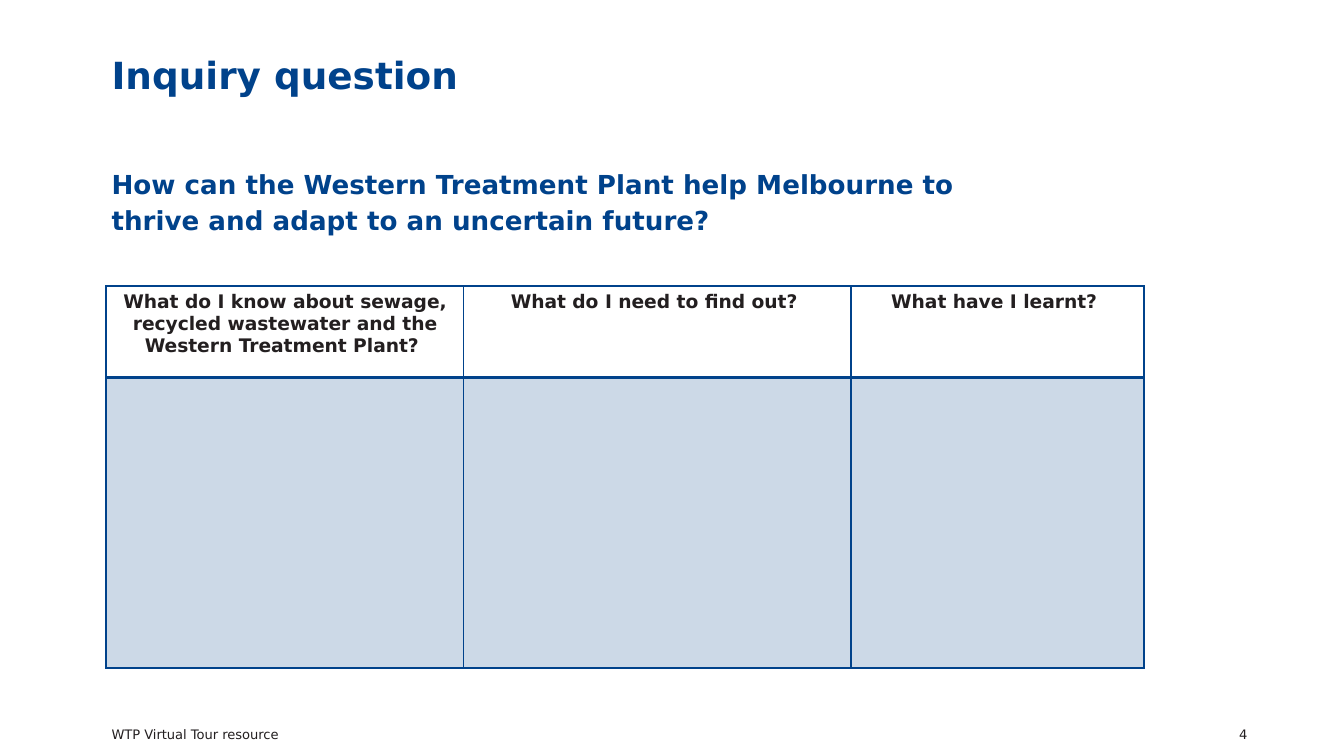
from lxml import etree
from pptx import Presentation
from pptx.dml.color import RGBColor
from pptx.enum.text import MSO_ANCHOR, PP_ALIGN
from pptx.oxml.ns import qn
from pptx.util import Inches, Pt

TOP, MIDDLE = MSO_ANCHOR.TOP, MSO_ANCHOR.MIDDLE
LEFT, CENTER, RIGHT = PP_ALIGN.LEFT, PP_ALIGN.CENTER, PP_ALIGN.RIGHT
BLUE = RGBColor(0x00, 0x42, 0x8B)
PALE = RGBColor(0xCC, 0xD9, 0xE7)
INK = RGBColor(0x23, 0x1F, 0x20)
FONT = "DejaVu Sans"
WIDE = 10
HIGH = WIDE * 9 / 16
EDGE = 0.79
FOOT = 5.37

# text, box (left, top, width, height), size, colour, bold, align, anchor, line spacing
TEXTS = [
    ("Inquiry question", (EDGE, 0.06, 5.79, 1.03),
     20, BLUE, True, LEFT, MIDDLE, 0.9),
    ("How can the Western Treatment Plant help Melbourne to thrive "
     "and adapt to an uncertain future?", (EDGE, 1.18, 6.46, 4.02),
     14, BLUE, True, LEFT, TOP, 1.15),
    ("WTP Virtual Tour resource", (EDGE, FOOT, 3.38, 0.18),
     7, INK, False, LEFT, MIDDLE, 1.0),
    ("4", (8.67, FOOT, 0.65, 0.18), 7, INK, False, RIGHT, MIDDLE, 1.0),
]
HEADS = [
    "What do I know about sewage, recycled wastewater and the "
    "Western Treatment Plant? ",
    "What do I need to find out? ",
    "What have I learnt? ",
]
COLS = [2.66, 2.88, 2.18]
ROWS = [0.68, 2.16]
GRID_TOP = 2.13


def style(para, size, color, bold, align):
    para.alignment = align
    font = para.font
    font.name, font.size, font.bold = FONT, Pt(size), bold
    font.color.rgb = color


def add_text(slide, text, box, size, color, bold, align, anchor, space):
    frame = slide.shapes.add_textbox(*map(Inches, box)).text_frame
    frame.word_wrap = True
    frame.vertical_anchor = anchor
    frame.margin_left = frame.margin_right = Inches(0.04)
    frame.margin_top = frame.margin_bottom = Inches(0.04)
    para = frame.paragraphs[0]
    para.text = text
    para.line_spacing = space
    style(para, size, color, bold, align)


def set_borders(cell, widths):
    """Draw blue cell edges; widths maps a side (L, R, T, B) to points."""
    props = cell._tc.get_or_add_tcPr()
    for side, width in widths.items():
        line = etree.SubElement(props, qn(f"a:ln{side}"), w=str(Pt(width)))
        fill = etree.SubElement(line, qn("a:solidFill"))
        etree.SubElement(fill, qn("a:srgbClr"), val=str(BLUE))


def add_grid(slide):
    table = slide.shapes.add_table(
        len(ROWS), len(COLS), Inches(EDGE), Inches(GRID_TOP),
        Inches(sum(COLS)), Inches(sum(ROWS))).table
    for col, width in zip(table.columns, COLS):
        col.width = Inches(width)
    for row, height in zip(table.rows, ROWS):
        row.height = Inches(height)
    for i, head in enumerate(HEADS):
        top, body = table.cell(0, i), table.cell(1, i)
        set_borders(top, {"L": 1, "R": 1, "T": 1, "B": 2})
        set_borders(body, {"L": 1, "R": 1, "T": 2, "B": 1})
        top.fill.background()
        body.fill.solid()
        body.fill.fore_color.rgb = PALE
        for cell in (top, body):
            cell.margin_left = cell.margin_right = Inches(0.08)
            cell.margin_top = cell.margin_bottom = Inches(0.04)
        top.text = head
        style(top.text_frame.paragraphs[0], 10, INK, True, CENTER)


deck = Presentation()
deck.slide_width, deck.slide_height = Inches(WIDE), Inches(HIGH)
slide = deck.slides.add_slide(deck.slide_layouts[6])
for item in TEXTS:
    add_text(slide, *item)
add_grid(slide)
deck.save("out.pptx")
